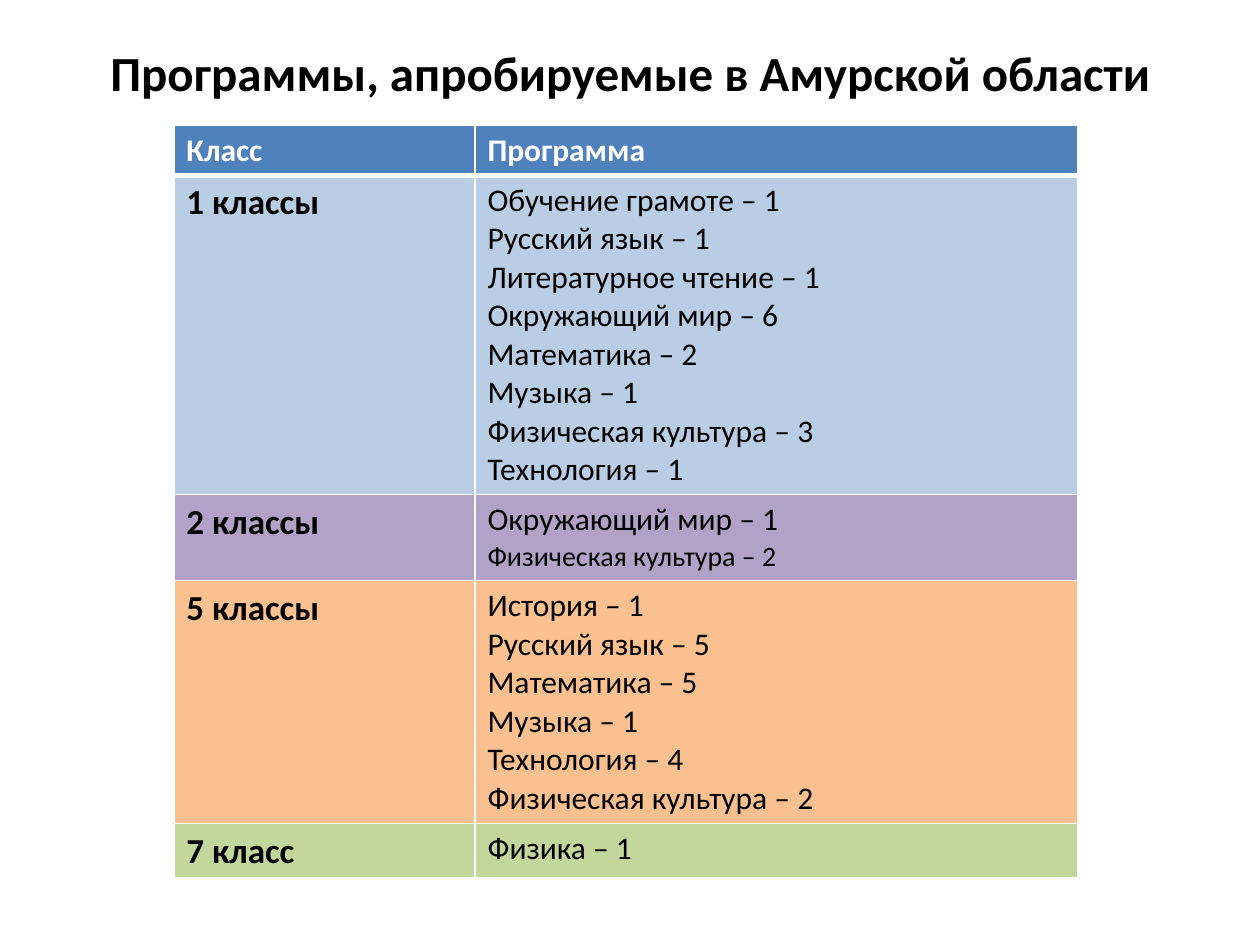
from dataclasses import dataclass

from lxml.etree import SubElement
from pptx import Presentation
from pptx.dml.color import RGBColor
from pptx.enum.text import MSO_ANCHOR, PP_ALIGN
from pptx.oxml.ns import qn
from pptx.slide import Slide
from pptx.table import _Cell as Cell
from pptx.util import Inches, Pt

FONT = "Calibri"
COLORS = {
    "black": "000000",
    "white": "FFFFFF",
    "header": "4F81BD",
    "blue": "B9CDE5",
    "purple": "B3A2C7",
    "orange": "FAC090",
    "green": "C3D69B",
}
THIN, THICK = 1, 3  # border widths in points
WIDTH, HEIGHT = Inches(10), Inches(7.5)
TABLE_LEFT, TABLE_TOP, TABLE_WIDTH = 0.138, 0.132, 0.717  # shares of the slide
COLUMN_SHARES = (1 / 3, 2 / 3)


@dataclass(frozen=True)
class Line:
    text: str
    size: int = 18
    bold: bool = False


@dataclass(frozen=True)
class Row:
    height: float  # share of the slide height
    fill: str
    grade: Line
    programs: tuple[Line, ...]
    color: str = "black"
    top: int = THIN
    bottom: int = THIN


def grade(text: str) -> Line:
    return Line(text, 20, True)


def programs(*texts: str) -> tuple[Line, ...]:
    return tuple(Line(text) for text in texts)


ROWS = (
    Row(0.053, "header", Line("Класс", bold=True), (Line("Программа", bold=True),),
        color="white", bottom=THICK),
    Row(0.338, "blue", grade("1 классы"),
        programs("Обучение грамоте – 1", "Русский язык – 1", "Литературное чтение – 1",
                 "Окружающий мир – 6", "Математика – 2", "Музыка – 1",
                 "Физическая культура – 3", "Технология – 1"),
        top=THICK),
    Row(0.091, "purple", grade("2 классы"),
        (Line("Окружающий мир – 1"), Line("Физическая культура – 2", 16))),
    Row(0.257, "orange", grade("5 классы"),
        programs("История – 1", "Русский язык – 5", "Математика – 5", "Музыка – 1",
                 "Технология – 4", "Физическая культура – 2")),
    Row(0.058, "green", grade("7 класс"), programs("Физика – 1")),
)


def rgb(name: str) -> RGBColor:
    return RGBColor.from_string(COLORS[name])


def write_lines(tf, lines: tuple[Line, ...], color: str, align=PP_ALIGN.LEFT) -> None:
    for i, line in enumerate(lines):
        p = tf.paragraphs[0] if i == 0 else tf.add_paragraph()
        p.text = line.text
        p.alignment = align
        p.font.name = FONT
        p.font.size = Pt(line.size)
        p.font.bold = line.bold
        p.font.color.rgb = rgb(color)


def set_borders(cell: Cell, top: int, bottom: int) -> None:
    tc_pr = cell._tc.get_or_add_tcPr()
    for side, width in (("L", THIN), ("R", THIN), ("T", top), ("B", bottom)):
        ln = SubElement(tc_pr, qn(f"a:ln{side}"), w=str(Pt(width)))
        fill = SubElement(ln, qn("a:solidFill"))
        SubElement(fill, qn("a:srgbClr"), val=COLORS["white"])


def add_title(s: Slide, text: str) -> None:
    sp = s.shapes.add_textbox(int(WIDTH * 0.05), int(HEIGHT * 0.04),
                              int(WIDTH * 0.9), int(HEIGHT * 0.072))
    tf = sp.text_frame
    tf.word_wrap = True
    tf.vertical_anchor = MSO_ANCHOR.MIDDLE
    write_lines(tf, (Line(text, 28, True),), "black", PP_ALIGN.CENTER)


def add_program_table(s: Slide, rows: tuple[Row, ...]) -> None:
    width = int(WIDTH * TABLE_WIDTH)
    height = int(HEIGHT * sum(row.height for row in rows))
    table = s.shapes.add_table(len(rows), len(COLUMN_SHARES), int(WIDTH * TABLE_LEFT),
                               int(HEIGHT * TABLE_TOP), width, height).table
    for column, share in zip(table.columns, COLUMN_SHARES):
        column.width = int(width * share)
    for i, row in enumerate(rows):
        table.rows[i].height = int(HEIGHT * row.height)
        for j, lines in enumerate(((row.grade,), row.programs)):
            cell = table.cell(i, j)
            set_borders(cell, row.top, row.bottom)
            cell.fill.solid()
            cell.fill.fore_color.rgb = rgb(row.fill)
            write_lines(cell.text_frame, lines, row.color)


def main() -> None:
    prs = Presentation()
    prs.slide_width, prs.slide_height = WIDTH, HEIGHT
    s = prs.slides.add_slide(prs.slide_layouts[6])
    add_title(s, "Программы, апробируемые в Амурской области")
    add_program_table(s, ROWS)
    prs.save("out.pptx")


if __name__ == "__main__":
    main()
